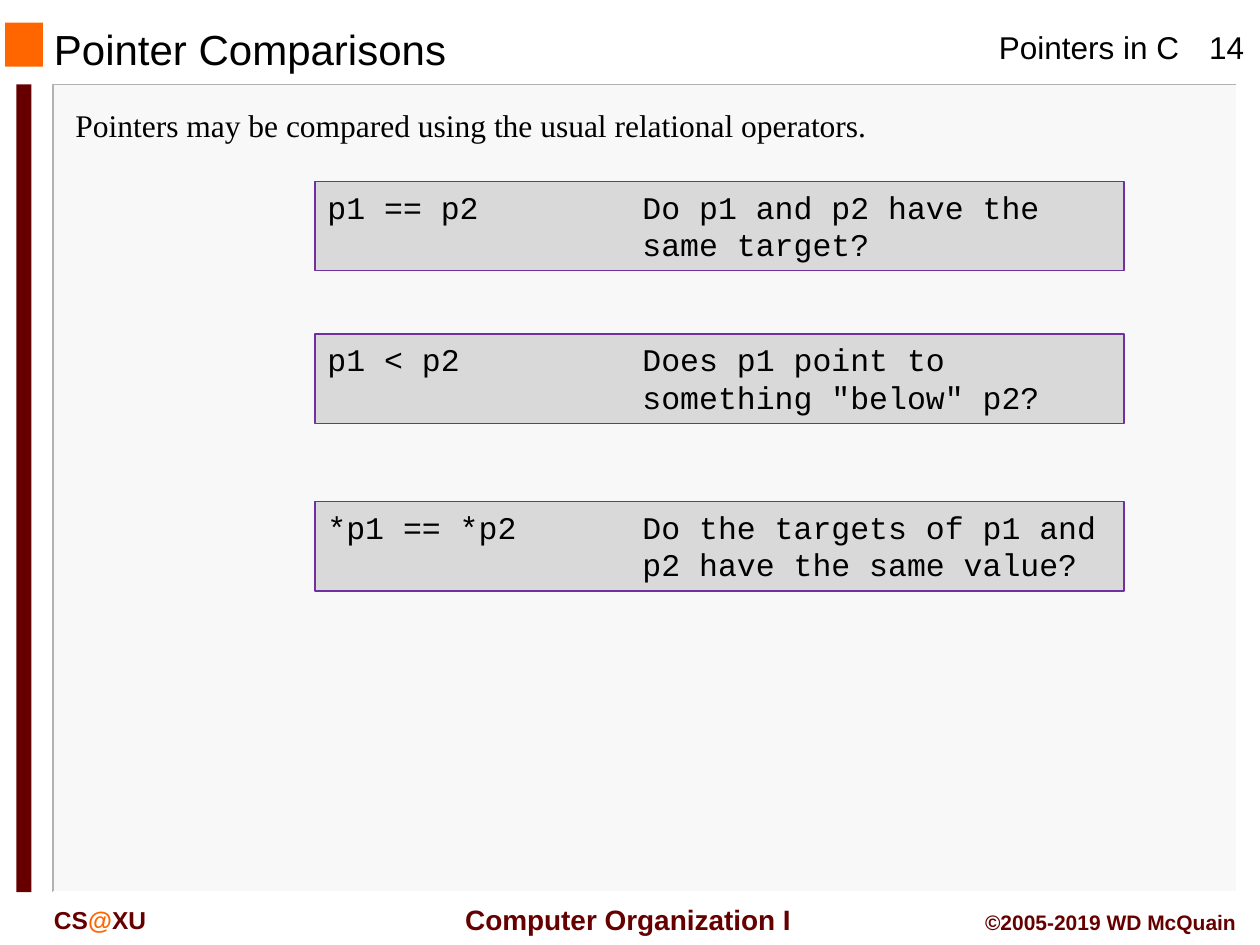
from dataclasses import dataclass

from pptx import Presentation
from pptx.dml.color import RGBColor
from pptx.enum.shapes import MSO_SHAPE
from pptx.enum.text import MSO_ANCHOR, PP_ALIGN
from pptx.util import Inches, Pt


@dataclass(frozen=True)
class Theme:
    black: str = "000000"
    maroon: str = "660000"
    orange: str = "FF6600"
    panel: str = "F8F8F8"
    shade: str = "B2B2B2"
    light: str = "FFFFFF"
    code_fill: str = "D9D9D9"
    code_line: str = "7030A0"
    sans: str = "Arial"
    serif: str = "Times New Roman"
    mono: str = "Courier New"
    title: int = 24
    body: int = 18
    course: int = 16
    dept: int = 14
    credit: int = 12


THEME = Theme()
COMPARISONS = [
    (1.44, "p1 == p2", "Do p1 and p2 have the same target?"),
    (2.65, "p1 < p2", 'Does p1 point to something "below" p2?'),
    (3.98, "*p1 == *p2", "Do the targets of p1 and p2 have the same value?"),
]


def add_rect(slide, x, y, w, h, fill, line=None):
    sp = slide.shapes.add_shape(MSO_SHAPE.RECTANGLE, Inches(x), Inches(y), Inches(w), Inches(h))
    sp.shadow.inherit = False
    sp.fill.solid()
    sp.fill.fore_color.rgb = RGBColor.from_string(fill)
    if line:
        sp.line.color.rgb = RGBColor.from_string(line)
        sp.line.width = Pt(0.75)
    else:
        sp.line.fill.background()
    return sp


def add_edge(slide, points, color):
    """Draw an open two-sided border."""
    start, *rest = [(Inches(x), Inches(y)) for x, y in points]
    builder = slide.shapes.build_freeform(*start, scale=1.0)
    builder.add_line_segments(rest, close=False)
    sp = builder.convert_to_shape()
    sp.shadow.inherit = False
    sp.fill.background()
    sp.line.color.rgb = RGBColor.from_string(color)
    sp.line.width = Pt(1)


def write(sp, parts, size, font, bold=False, align=PP_ALIGN.LEFT,
          anchor=MSO_ANCHOR.TOP, wrap=True):
    """Fill a shape with one paragraph of (text, color) parts."""
    tf = sp.text_frame
    tf.word_wrap = wrap
    tf.vertical_anchor = anchor
    p = tf.paragraphs[0]
    p.alignment = align
    for text, color in parts:
        r = p.add_run()
        r.text = text
        r.font.size = Pt(size)
        r.font.name = font
        r.font.bold = bold
        r.font.color.rgb = RGBColor.from_string(color)
    return p


def add_text(slide, x, y, w, h, parts, size, font=THEME.sans, **style):
    sp = slide.shapes.add_textbox(Inches(x), Inches(y), Inches(w), Inches(h))
    write(sp, parts, size, font, **style)


def add_frame(slide, x, y, w, h):
    # Content panel with a dark upper-left and a light lower-right edge
    add_rect(slide, x, y, w, h, THEME.panel)
    right, bottom = x + w, y + h
    add_edge(slide, [(right, y), (x, y), (x, bottom)], THEME.shade)
    add_edge(slide, [(right, y), (right, bottom), (x, bottom)], THEME.light)
    # Side bar
    add_rect(slide, x - 0.29, y, 0.12, h, THEME.maroon)


def add_header(slide, x, y, title, topic, number):
    add_rect(slide, x, y, 0.3, 0.35, THEME.orange)
    add_text(slide, x + 0.29, y + 0.02, 6.33, 0.38, [(title, THEME.black)], THEME.title,
             anchor=MSO_ANCHOR.MIDDLE)
    add_text(slide, x + 7.79, y - 0.01, 1.65, 0.4, [(topic, THEME.black)], THEME.body, wrap=False)
    add_text(slide, x + 9.36, y - 0.01, 0.67, 0.4, [(number, THEME.black)], THEME.body,
             align=PP_ALIGN.CENTER)


def add_footer(slide, x, y):
    dept = [("CS", THEME.maroon), ("@", THEME.orange), ("XU", THEME.maroon)]
    add_text(slide, x, y + 0.02, 1.5, 0.33, dept, THEME.dept, bold=True)
    add_text(slide, x + 3.2, y, 2.91, 0.37, [("Computer Organization I", THEME.maroon)],
             THEME.course, bold=True, align=PP_ALIGN.CENTER, anchor=MSO_ANCHOR.MIDDLE)
    add_text(slide, x + 7.25, y + 0.06, 2.33, 0.3, [("©2005-2019 WD McQuain", THEME.maroon)],
             THEME.credit, bold=True, align=PP_ALIGN.RIGHT)


def add_comparison(slide, x, y, w, h, expression, meaning):
    sp = add_rect(slide, x, y, w, h, THEME.code_fill, THEME.code_line)
    p = write(sp, [(f"{expression}\t{meaning}", THEME.black)], THEME.body, THEME.mono)
    # Hanging indent keeps the meaning in its own column
    pPr = p._p.get_or_add_pPr()
    pPr.set("marL", str(Inches(2.5)))
    pPr.set("indent", str(-Inches(2.5)))


def main():
    prs = Presentation()
    prs.slide_width, prs.slide_height = Inches(10), Inches(7.5)
    s = prs.slides.add_slide(prs.slide_layouts[6])

    add_frame(s, 0.42, 0.67, 9.4, 6.41)
    add_header(s, 0.04, 0.18, "Pointer Comparisons", "Pointers in C", "14")
    add_footer(s, 0.33, 7.11)

    # Body
    intro = "Pointers may be compared using the usual relational operators."
    add_text(s, 0.5, 0.79, 9.25, 0.4, [(intro, THEME.black)], THEME.body, THEME.serif)
    for y, expression, meaning in COMPARISONS:
        add_comparison(s, 2.5, y, 6.42, 0.71, expression, meaning)

    prs.save("out.pptx")


if __name__ == "__main__":
    main()
